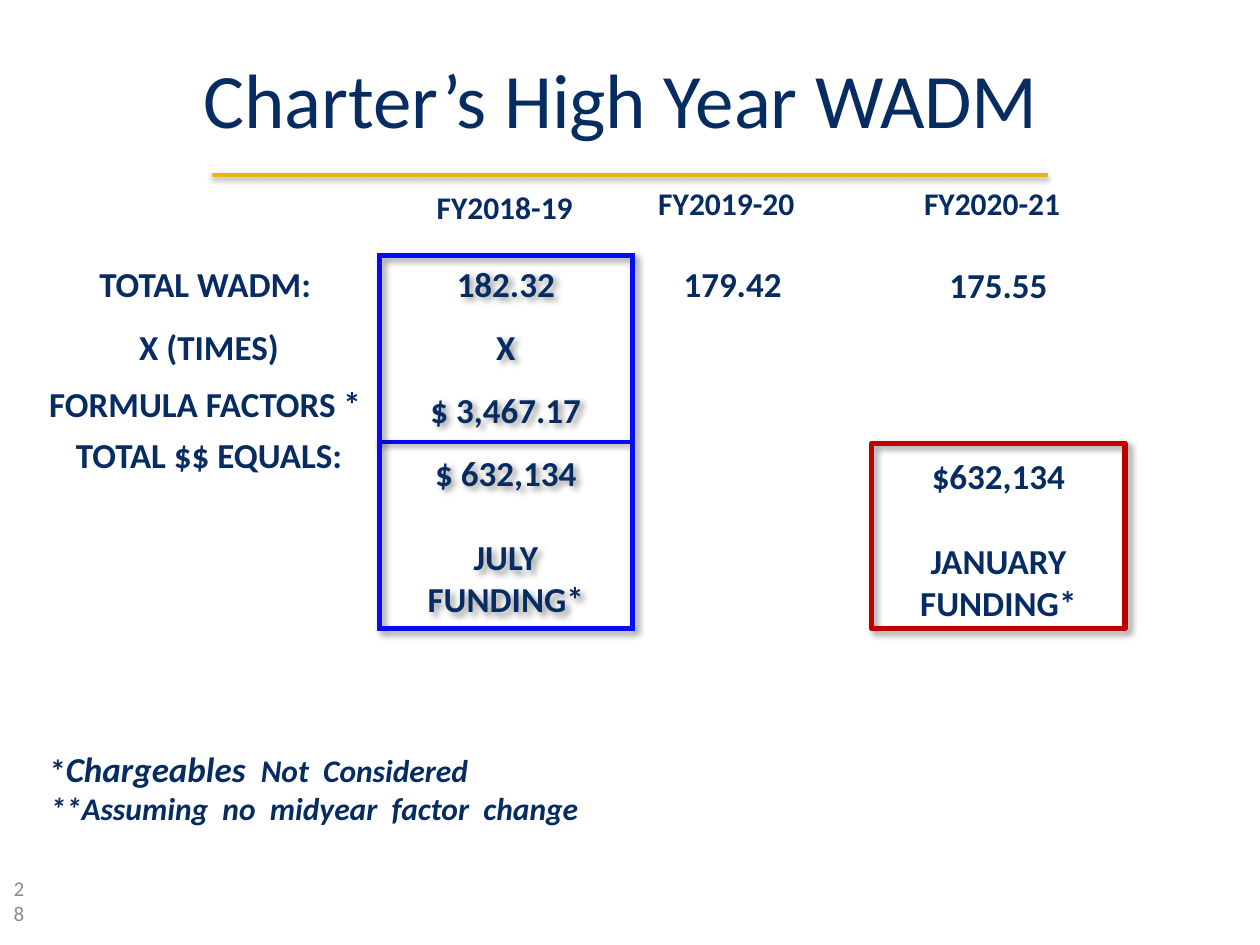
import pptx
import pptx.dml.color
import pptx.enum.shapes
import pptx.enum.text
import pptx.oxml
import pptx.oxml.ns
import pptx.util

Pt = pptx.util.Pt
ALIGN = pptx.enum.text.PP_ALIGN
ANCHOR = pptx.enum.text.MSO_ANCHOR
COLORS = {"navy": "072C62", "gold": "E7B617", "blue": "080BF5",
          "red": "C00000", "grey": "8C8C8C", "shadow": "000000"}
LINE_SHADOW = (38, 3.1, 1.6, 90)  # opacity %, blur, distance, angle
BOX_SHADOW = (40, 4, 3, 45)
LINE_HEIGHT = 24.4  # one single-spaced line at 20 pt


def rgb(name):
    return pptx.dml.color.RGBColor.from_string(COLORS[name])


class Deck:
    font = "Calibri"

    def __init__(self, width, height):
        self.prs = pptx.Presentation()
        self.prs.slide_width, self.prs.slide_height = Pt(width), Pt(height)

    def add_slide(self, title, box):
        self.s = self.prs.slides.add_slide(self.prs.slide_layouts[5])
        sp = self.s.shapes.title
        sp.left, sp.top, sp.width, sp.height = map(Pt, box)
        self.fill_text(sp.text_frame, [title], 44, bold=False, anchor=ANCHOR.MIDDLE)

    def style(self, font, size, color, bold):
        font.name, font.size, font.bold = self.font, Pt(size), bold
        font.color.rgb = rgb(color)

    def fill_text(self, tf, lines, size, color="navy", bold=True,
                  align=ALIGN.CENTER, anchor=ANCHOR.TOP):
        """Each line is a string or (text, line spacing, space before)."""
        tf.word_wrap, tf.vertical_anchor = True, anchor
        for i, line in enumerate(lines):
            text, spacing, before = (line, 1.0, 0) if isinstance(line, str) else line
            p = tf.paragraphs[0] if i == 0 else tf.add_paragraph()
            p.text, p.alignment = text, align
            p.line_spacing, p.space_before = spacing, Pt(before)
            self.style(p.font, size, color, bold)

    def text(self, box, lines, size, **options):
        sp = self.s.shapes.add_textbox(*map(Pt, box))
        self.fill_text(sp.text_frame, lines, size, **options)
        return sp

    def shadow(self, sp, opacity, blur, distance, angle):
        sp._element.spPr.append(pptx.oxml.parse_xml(
            f'<a:effectLst {pptx.oxml.ns.nsdecls("a")}>'
            f'<a:outerShdw blurRad="{Pt(blur)}" dist="{Pt(distance)}" '
            f'dir="{angle * 60000}" rotWithShape="0">'
            f'<a:srgbClr val="{COLORS["shadow"]}"><a:alpha val="{opacity * 1000}"/>'
            '</a:srgbClr></a:outerShdw></a:effectLst>'))

    def rule(self, x1, x2, y, color):
        sp = self.s.shapes.add_connector(
            pptx.enum.shapes.MSO_CONNECTOR.STRAIGHT, Pt(x1), Pt(y), Pt(x2), Pt(y))
        sp.line.color.rgb, sp.line.width = rgb(color), Pt(2)
        self.shadow(sp, *LINE_SHADOW)

    def frame(self, box, color, lines=(), join="round"):
        sp = self.s.shapes.add_shape(
            pptx.enum.shapes.MSO_SHAPE.RECTANGLE, *map(Pt, box))
        sp.fill.background()
        sp.line.color.rgb, sp.line.width = rgb(color), Pt(3)
        attrs = ' lim="800000"' if join == "miter" else ""
        sp._element.spPr.find(pptx.oxml.ns.qn("a:ln")).append(pptx.oxml.parse_xml(
            f'<a:{join} {pptx.oxml.ns.nsdecls("a")}{attrs}/>'))
        self.shadow(sp, *BOX_SHADOW)
        self.fill_text(sp.text_frame, lines, 20)


def main():
    deck = Deck(720, 540)

    # Title and slide number
    deck.add_slide("Charter’s High Year WADM ", (36, 10.8, 648, 90))
    deck.rule(121, 599, 100, "gold")
    deck.text((0, 500.4, 21.6, 28.8), ["28"], 12, color="grey", bold=False,
              anchor=ANCHOR.MIDDLE)

    # Fiscal year headings
    for year, left, top, width in (("FY2018-19", 225.4, 103.7, 126),
                                   ("FY2019-20", 346.3, 101.5, 137.5),
                                   ("FY2020-21", 498.2, 101.5, 137.5)):
        deck.text((left, top, width, 28.8), [year], 18)

    # Year columns
    deck.text((346.3, 146.2, 144.7, 213), ["179.42"], 20)
    deck.text((498.2, 146.9, 144.7, 213),
              ["175.55", ("$632,134", 1.5, 3 * LINE_HEIGHT),
               ("JANUARY", 1.0, LINE_HEIGHT), "FUNDING*"], 20)

    # Footnotes
    sp = deck.text((21.6, 423.4, 360, 52.6),
                   ["", "**Assuming  no  midyear  factor  change"], 18,
                   align=ALIGN.LEFT)
    first, second = sp.text_frame.paragraphs
    second.font.italic = True
    for text, size, italic in (("*", 18, False), ("Chargeables ", 20, True),
                               (" Not  Considered", 18, True)):
        r = first.add_run()
        r.text, r.font.size, r.font.italic = text, Pt(size), italic

    # Funding frames
    deck.rule(216, 361, 252.7, "blue")
    deck.frame((498.2, 253.4, 144.7, 105.8), "red")
    deck.frame((216.7, 146.2, 144.7, 213), "blue",
               ["182.32", ("X", 1.5, 0), ("$ 3,467.17", 1.5, 0),
                ("$ 632,134", 1.5, 0), ("JULY", 1.0, LINE_HEIGHT), "FUNDING*"],
               join="miter")

    # Row labels
    deck.text((-4.3, 146.2, 247.7, 293.8),
              ["TOTAL WADM: ", ("X (TIMES)", 1.5, 0),
               ("FORMULA FACTORS * ", 1.2, 4), ("TOTAL $$ EQUALS:", 0.8, 10)], 20)

    deck.prs.save("out.pptx")


if __name__ == "__main__":
    main()
